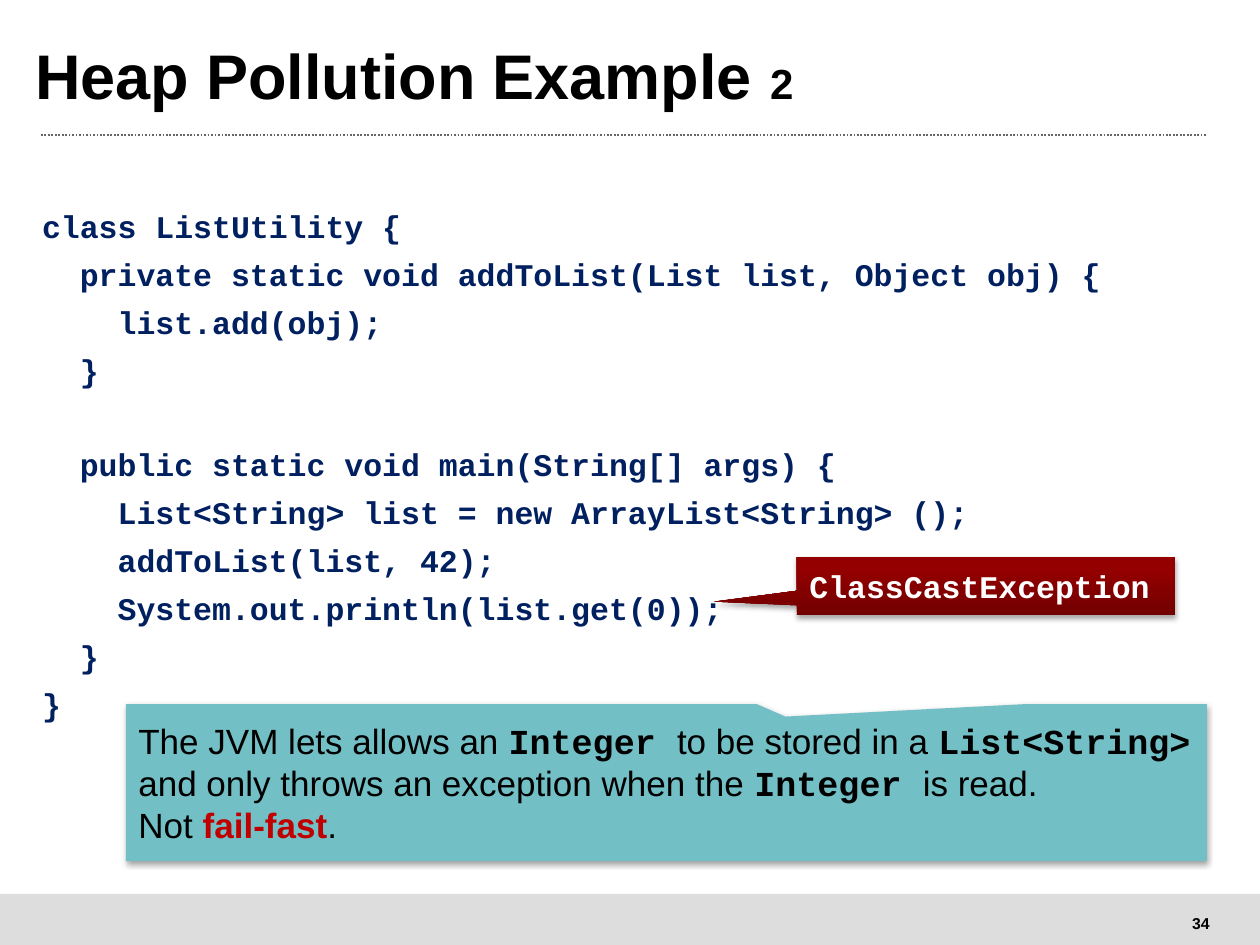
from dataclasses import dataclass

import lxml.etree
import pptx
import pptx.dml.color
import pptx.enum.dml
import pptx.enum.shapes
import pptx.enum.text
import pptx.oxml.ns
import pptx.util

RGBColor = pptx.dml.color.RGBColor
BLACK = RGBColor(0, 0, 0)
WHITE = RGBColor(0xFF, 0xFF, 0xFF)
NAVY = RGBColor(0x00, 0x20, 0x60)
RED = RGBColor(0xC0, 0, 0)
DARK_RED = RGBColor(0x72, 0, 0)
MAROON = RGBColor(0x94, 0, 0)
TEAL = RGBColor(0x72, 0xBF, 0xC5)
RULE_GREY = RGBColor(0x66, 0x66, 0x66)
FOOTER_GREY = RGBColor(0xDD, 0xDD, 0xDD)

SANS, MONO = "Arial", "Courier New"
EMU_PER_PX = 914400 / 126
LINE_GAP, BLOCK_GAP = 5.8, 32  # points after a code line and after a method

LEFT = pptx.enum.text.PP_ALIGN.LEFT
MIDDLE = pptx.enum.text.MSO_ANCHOR.MIDDLE
SHAPE = pptx.enum.shapes.MSO_SHAPE


@dataclass(frozen=True)
class Span:
    text: str
    size: int
    font: str = SANS
    color: RGBColor = BLACK
    bold: bool = False


@dataclass(frozen=True)
class Callout:
    box: tuple[int, int, int, int]
    pointer: tuple[float, float]
    fills: tuple[RGBColor, ...]
    lines: list[list[Span]]


def px(length: int) -> int:
    return pptx.util.Emu(round(length * EMU_PER_PX))


def place(shape, *box: int) -> None:
    shape.left, shape.top, shape.width, shape.height = map(px, box)


def add_spans(paragraph, spans: list[Span]) -> None:
    for span in spans:
        run = paragraph.add_run()
        run.text = span.text
        run.font.name = span.font
        run.font.size = pptx.util.Pt(span.size)
        run.font.bold = span.bold
        run.font.color.rgb = span.color


def next_paragraph(frame, index: int):
    return frame.add_paragraph() if index else frame.paragraphs[0]


def clear_frame(frame) -> None:
    frame.margin_left = frame.margin_top = 0
    frame.margin_right = frame.margin_bottom = 0
    frame.auto_size = pptx.enum.text.MSO_AUTO_SIZE.NONE


def add_shadow(shape) -> None:
    qn = pptx.oxml.ns.qn
    shape.shadow.inherit = False
    effects = shape._element.spPr.find(qn("a:effectLst"))
    shadow = lxml.etree.SubElement(
        effects, qn("a:outerShdw"), blurRad=str(pptx.util.Pt(3.1)),
        dist=str(pptx.util.Pt(1.8)), dir="5400000", rotWithShape="0")
    color = lxml.etree.SubElement(shadow, qn("a:srgbClr"), val="000000")
    lxml.etree.SubElement(color, qn("a:alpha"), val="35000")


def add_callout(slide, callout: Callout) -> None:
    shape = slide.shapes.add_shape(
        SHAPE.RECTANGULAR_CALLOUT, *map(px, callout.box))
    shape.adjustments[0], shape.adjustments[1] = callout.pointer
    if len(callout.fills) == 1:
        shape.fill.solid()
        shape.fill.fore_color.rgb = callout.fills[0]
    else:
        shape.fill.gradient()
        shape.fill.gradient_angle = 90
        stops = zip(shape.fill.gradient_stops, callout.fills, (0, 0.8))
        for stop, color, position in stops:
            stop.color.rgb = color
            stop.position = position
    shape.line.fill.background()
    add_shadow(shape)
    frame = shape.text_frame
    frame.word_wrap = True
    frame.vertical_anchor = MIDDLE
    for index, spans in enumerate(callout.lines):
        paragraph = next_paragraph(frame, index)
        paragraph.alignment = LEFT
        add_spans(paragraph, spans)


def add_code(body, methods: list[list[str]]) -> None:
    """Write code line by line, with a wide gap after each method."""
    frame = body.text_frame
    clear_frame(frame)
    lines = [(line, BLOCK_GAP if line is method[-1] else LINE_GAP)
             for method in methods for line in method]
    for index, (line, gap) in enumerate(lines):
        paragraph = next_paragraph(frame, index)
        properties = paragraph._p.get_or_add_pPr()
        properties.set("marL", "0")
        properties.set("indent", "0")
        lxml.etree.SubElement(properties, pptx.oxml.ns.qn("a:buNone"))
        paragraph.space_before = pptx.util.Pt(0)
        paragraph.space_after = pptx.util.Pt(gap)
        add_spans(paragraph, [Span(line, 18, MONO, NAVY, True)])


CODE = [
    ["class ListUtility {",
     "  private static void addToList(List list, Object obj) {",
     "    list.add(obj);",
     "  }"],
    ["  public static void main(String[] args) {",
     "    List<String> list = new ArrayList<String> ();",
     "    addToList(list, 42);",
     "    System.out.println(list.get(0));",
     "  }",
     "}"],
]

CALLOUTS = [
    Callout((797, 557, 378, 58), (-0.72, 0.27), (DARK_RED, MAROON),
            [[Span("ClassCastException", 18, MONO, WHITE, True)]]),
    Callout((126, 704, 1081, 157), (0.11, -0.42), (TEAL,), [
        [Span("The JVM lets allows an ", 20),
         Span("Integer ", 20, MONO, bold=True),
         Span("to be stored in a ", 20),
         Span("List<String> ", 20, MONO, bold=True),
         Span("and only throws an exception when the ", 20),
         Span("Integer ", 20, MONO, bold=True),
         Span("is read.", 20)],
        [Span("Not ", 20),
         Span("fail-fast", 20, color=RED, bold=True),
         Span(".", 20)],
    ]),
]


def main() -> None:
    deck = pptx.Presentation()
    deck.slide_width, deck.slide_height = px(1260), px(945)
    slide = deck.slides.add_slide(deck.slide_layouts[1])

    # Footer band and page number
    footer = slide.shapes.add_shape(SHAPE.RECTANGLE, *map(px, (0, 894, 1260, 51)))
    footer.shadow.inherit = False
    footer.fill.solid()
    footer.fill.fore_color.rgb = FOOTER_GREY
    footer.line.fill.background()
    page = slide.shapes.add_textbox(*map(px, (1179, 907, 44, 32))).text_frame
    page.word_wrap = False
    page.vertical_anchor = MIDDLE
    page.paragraphs[0].alignment = pptx.enum.text.PP_ALIGN.CENTER
    add_spans(page.paragraphs[0], [Span("34", 9, bold=True)])

    # Title and the dotted rule below it
    title = slide.shapes.title
    place(title, 35, 32, 1168, 98)
    clear_frame(title.text_frame)
    title.text_frame.vertical_anchor = MIDDLE
    heading = title.text_frame.paragraphs[0]
    heading.alignment = LEFT
    heading.line_spacing = 0.8
    add_spans(heading, [Span("Heap Pollution Example ", 36, bold=True),
                        Span("2", 24, bold=True)])
    rule = slide.shapes.add_connector(
        pptx.enum.shapes.MSO_CONNECTOR.STRAIGHT, *map(px, (41, 135, 1207, 135)))
    rule.line.color.rgb = RULE_GREY
    rule.line.width = pptx.util.Pt(1)
    rule.line.dash_style = pptx.enum.dml.MSO_LINE.ROUND_DOT
    lxml.etree.SubElement(rule._element.spPr, pptx.oxml.ns.qn("a:effectLst"))

    # Code listing
    body = slide.placeholders[1]
    place(body, 42, 207, 1165, 654)
    add_code(body, CODE)

    # Callouts
    for callout in CALLOUTS:
        add_callout(slide, callout)

    deck.save("out.pptx")


if __name__ == "__main__":
    main()
